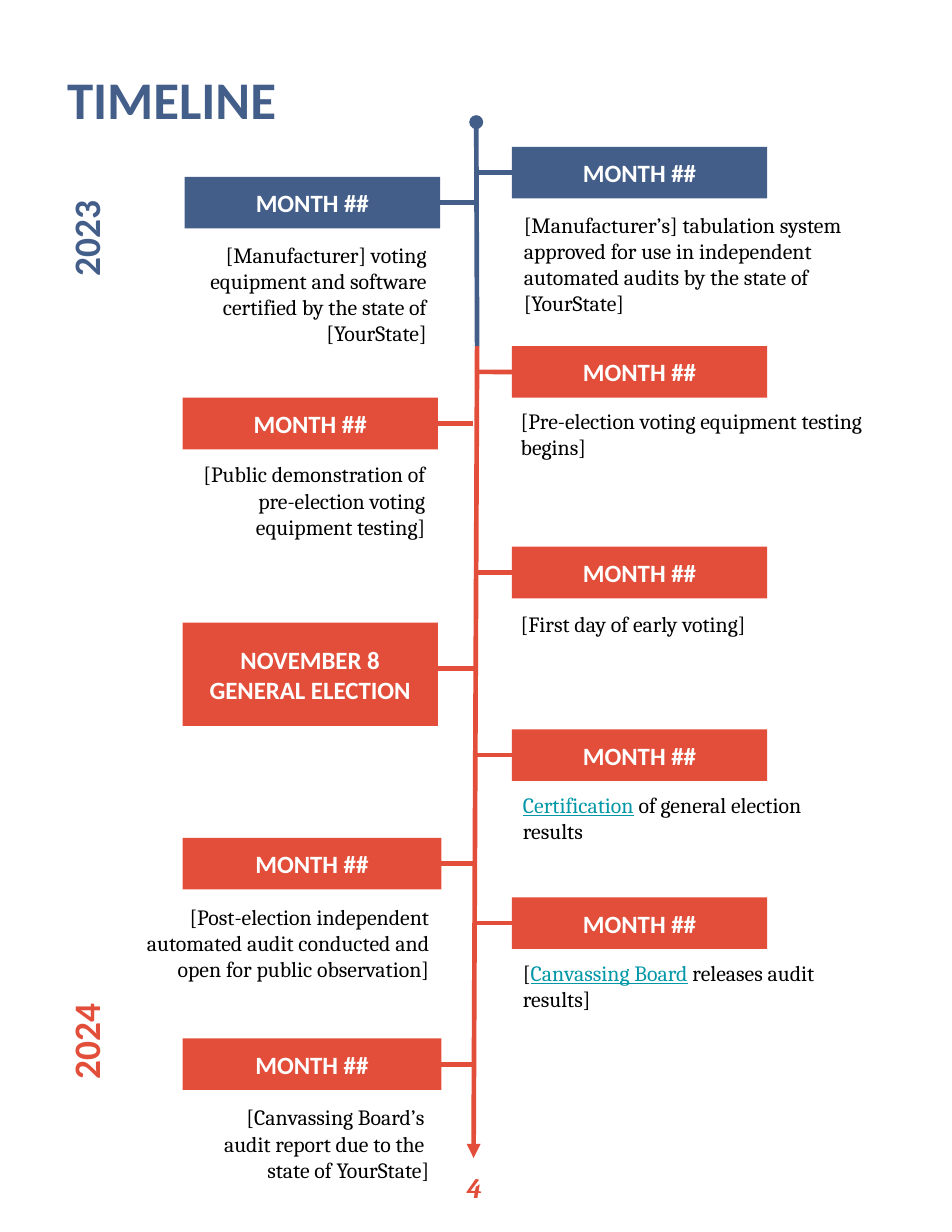
"""Build a portrait timeline slide of election events."""
from dataclasses import dataclass

from lxml.etree import SubElement
from pptx import Presentation
from pptx.dml.color import RGBColor
from pptx.enum.shapes import MSO_CONNECTOR, MSO_SHAPE
from pptx.enum.text import MSO_ANCHOR, MSO_AUTO_SIZE, PP_ALIGN
from pptx.oxml.ns import qn
from pptx.util import Cm, Pt

COLORS = {
    "blue": "445E8A",
    "red": "E24E39",
    "teal": "0097A7",
    "white": "FFFFFF",
    "black": "000000",
}
RIGHT_BOX, LEFT_BOX = 11.61, 4.14
AXIS = {"left": 10.8, "right": 10.82}


@dataclass
class Event:
    """A dated box with its caption beside the axis."""
    side: str
    top: float
    caption: list
    caption_area: tuple
    color: str = "red"
    left: float = LEFT_BOX
    width: float = 5.79
    stem_end: float = AXIS["left"]


EVENTS = [
    Event("right", 3.33,
          [("[Manufacturer’s] tabulation system approved for use in independent "
            "automated audits by the state of [YourState]", "black")],
          (11.63, 4.55, 8.18, 2.72), color="blue"),
    Event("left", 4.01,
          [("[Manufacturer] voting equipment and software certified by the "
            "state of [YourState]", "black")],
          (3.28, 5.23, 6.65, 2.92), color="blue", left=4.19),
    Event("right", 7.85,
          [("[Pre-election voting equipment testing begins]", "black")],
          (11.56, 8.99, 8.28, 2.34)),
    Event("left", 9.02,
          [("[Public demonstration of pre-election voting equipment testing]", "black")],
          (3.45, 10.21, 6.45, 1.96), stem_end=10.72),
    Event("right", 12.4,
          [("[First day of early voting]", "black")],
          (11.56, 13.59, 8.26, 1.17)),
    Event("right", 16.54,
          [("Certification", "teal"), (" of general election results", "black")],
          (11.61, 17.7, 7.47, 2.13)),
    Event("left", 19,
          [("[Post-election independent automated audit conducted and open for "
            "public observation]", "black")],
          (2.95, 20.24, 7.04, 3), width=5.87),
    Event("right", 20.35,
          [("[", "black"), ("Canvassing Board", "teal"),
           (" releases audit results]", "black")],
          (11.61, 21.51, 8.74, 2.13)),
    Event("left", 23.55,
          [("[Canvassing Board’s \naudit report due to the \nstate of YourState]", "black")],
          (2.95, 24.79, 7.04, 2.13), width=5.87),
]


def add_run(paragraph, text, size, color, font="Calibri", bold=True, italic=False):
    """Add one formatted run, and return it."""
    run = paragraph.add_run()
    run.text = text
    run.font.name, run.font.size = font, Pt(size)
    run.font.bold, run.font.italic = bold, italic
    run.font.color.rgb = RGBColor.from_string(COLORS[color])
    return run


def set_frame(shape, anchor=MSO_ANCHOR.TOP):
    """Give a shape's text frame its insets, wrapping and anchor."""
    frame = shape.text_frame
    frame.word_wrap, frame.auto_size = True, MSO_AUTO_SIZE.NONE
    frame.vertical_anchor = anchor
    frame.margin_left = frame.margin_right = Cm(0.25)
    frame.margin_top = frame.margin_bottom = Cm(0.25)
    return frame


def add_text_box(slide, area, align, anchor=MSO_ANCHOR.TOP, rotation=0):
    """Add a text box, and return its first paragraph."""
    shape = slide.shapes.add_textbox(*map(Cm, area))
    shape.rotation = rotation
    paragraph = set_frame(shape, anchor).paragraphs[0]
    paragraph.alignment = align
    return paragraph


def add_caption(slide, area, pieces, align):
    """Add an event's caption, underlining the teal terms."""
    paragraph = add_text_box(slide, area, align)
    for text, color in pieces:
        for index, line in enumerate(text.split("\n")):
            if index:
                paragraph.add_line_break()
            run = add_run(paragraph, line, 14, color, "Cambria", bold=False)
            run.font.underline = color == "teal"


def add_box(slide, area, lines, color):
    """Add a filled box with centred white text."""
    shape = slide.shapes.add_shape(MSO_SHAPE.ROUNDED_RECTANGLE, *map(Cm, area))
    shape.adjustments[0] = 0
    shape.shadow.inherit = False
    shape.fill.solid()
    shape.fill.fore_color.rgb = RGBColor.from_string(COLORS[color])
    shape.line.fill.background()
    frame = set_frame(shape, MSO_ANCHOR.MIDDLE)
    for index, line in enumerate(lines):
        paragraph = frame.add_paragraph() if index else frame.paragraphs[0]
        paragraph.alignment = PP_ALIGN.CENTER
        add_run(paragraph, line, 16, "white")
    return shape


def add_line(slide, start, end, color, head=None, tail=None):
    """Add a straight line with optional end marks."""
    connector = slide.shapes.add_connector(
        MSO_CONNECTOR.STRAIGHT, *map(Cm, start + end))
    connector.line.width = Pt(3)
    connector.line.color.rgb = RGBColor.from_string(COLORS[color])
    outline = connector.line._get_or_add_ln()
    for tag, kind in (("a:headEnd", head), ("a:tailEnd", tail)):
        if kind:
            SubElement(outline, qn(tag), type=kind)
    SubElement(connector._element.spPr, qn("a:effectLst"))
    return connector


def add_event(slide, event):
    """Add an event's box, its stem to the axis and its caption."""
    on_right = event.side == "right"
    left = RIGHT_BOX if on_right else event.left
    height = 1.17
    box = add_box(slide, (left, event.top, event.width, height), ["MONTH ##"], event.color)
    middle = event.top + height / 2
    if on_right:
        stem = add_line(slide, (AXIS["right"], middle), (left, middle), event.color)
        stem.end_connect(box, 1)
    else:
        stem = add_line(slide, (left + event.width, middle),
                        (event.stem_end, middle), event.color)
        stem.begin_connect(box, 3)
    align = PP_ALIGN.LEFT if on_right else PP_ALIGN.RIGHT
    add_caption(slide, event.caption_area, event.caption, align)


def add_year(slide, top, year, color):
    """Add a year that reads upwards at the left margin."""
    paragraph = add_text_box(slide, (0.18, top, 3.51, 1.27), PP_ALIGN.CENTER,
                             MSO_ANCHOR.MIDDLE, 270)
    add_run(paragraph, year, 24, color)


def set_title(slide, text):
    """Place and format the title placeholder."""
    title = slide.shapes.title
    title.left, title.top, title.width, title.height = map(Cm, (1.27, 1.27, 19.05, 2.82))
    paragraph = set_frame(title).paragraphs[0]
    paragraph.alignment = PP_ALIGN.LEFT
    add_run(paragraph, text, 34, "blue")


def main():
    """Build and save the presentation."""
    presentation = Presentation()
    presentation.slide_width, presentation.slide_height = Cm(21.59), Cm(27.94)
    slide = presentation.slides.add_slide(presentation.slide_layouts[5])
    set_title(slide, "TIMELINE")
    add_line(slide, (10.82, 7.85), (10.74, 26.26), "red", tail="triangle")
    add_line(slide, (10.8, 2.77), (10.82, 7.85), "blue", head="oval")
    for event in EVENTS:
        add_event(slide, event)
    add_box(slide, (LEFT_BOX, 14.12, 5.79, 2.34), ["NOVEMBER 8", "GENERAL ELECTION"], "red")
    add_line(slide, (9.17, 15.16), (AXIS["left"], 15.16), "red")
    add_year(slide, 4.78, "2023", "blue")
    add_year(slide, 22.99, "2024", "red")
    number = add_text_box(slide, (-0.08, 26.29, 21.67, 0.89), PP_ALIGN.CENTER)
    add_run(number, "4", 18, "red", "Cambria", italic=True)
    presentation.save("out.pptx")


if __name__ == "__main__":
    main()
